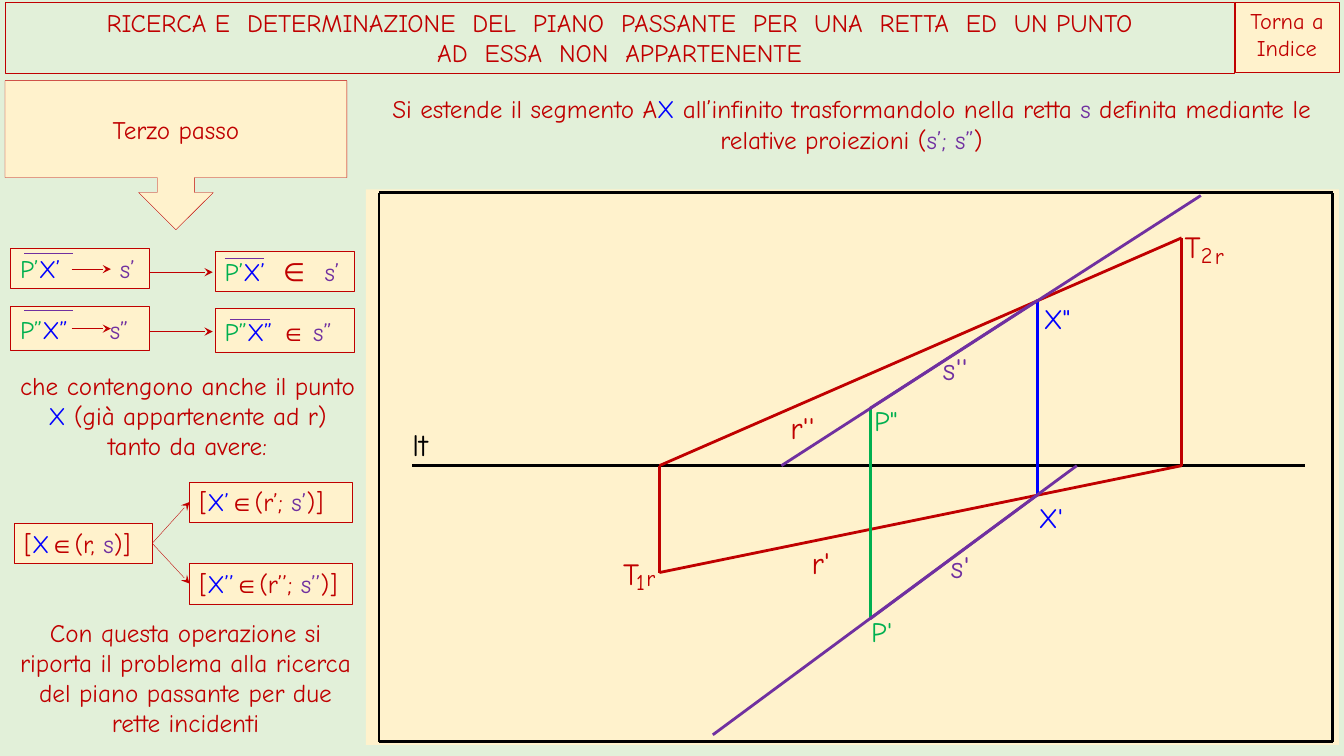
from itertools import pairwise

from lxml import etree
from pptx import Presentation
from pptx import util as u
from pptx.dml import color
from pptx.enum import shapes, text
from pptx.oxml import ns

COLUMNS, ROWS = 1333, 750
WIDTH, HEIGHT = u.Inches(13.33), u.Inches(7.5)
MINT, CREAM, BLACK = "E2F0D9", "FFF2CC", "000000"
RED, GREEN, BLUE, PURPLE = "C00000", "00B050", "0000FF", "7030A0"
FONT, SYMBOL_FONT = "Comic Neue", "Arial"
CENTER, LEFT = text.PP_ALIGN.CENTER, text.PP_ALIGN.LEFT
TOP, MIDDLE, BOTTOM = text.MSO_ANCHOR.TOP, text.MSO_ANCHOR.MIDDLE, text.MSO_ANCHOR.BOTTOM
RECTANGLE = shapes.MSO_SHAPE.RECTANGLE


def rgb(code):
    """Turn a hex string into a colour."""
    return color.RGBColor.from_string(code)


def across(columns):
    """Convert grid columns to a length."""
    return round(WIDTH * columns / COLUMNS)


def down(rows):
    """Convert grid rows to a length."""
    return round(HEIGHT * rows / ROWS)


def place(left, top, width, height):
    """Convert a grid cell range to a position and a size."""
    return across(left), down(top), across(width), down(height)


def set_tabs(paragraph, stops):
    """Add left tab stops, given in columns, to a paragraph."""
    tab_list = etree.SubElement(paragraph._p.get_or_add_pPr(), ns.qn("a:tabLst"))
    for stop in stops:
        etree.SubElement(tab_list, ns.qn("a:tab"), pos=str(across(stop)), algn="l")


def write(paragraph, runs, size=18, align=CENTER, stops=()):
    """Fill a paragraph with runs of (text, colour, optional font)."""
    if stops:
        set_tabs(paragraph, stops)
    paragraph.alignment = align
    paragraph.font.size = u.Pt(size)
    paragraph.font.name = FONT
    for words, code, *fonts in runs:
        run = paragraph.add_run()
        run.text = words
        run.font.color.rgb = rgb(code)
        if fonts:
            run.font.name = fonts[0]


def add_panel(slide, area, fill=CREAM, outline=RED, kind=RECTANGLE, anchor=TOP):
    """Add a shape with an optional fill and outline."""
    shape = slide.shapes.add_shape(kind, *place(*area))
    shape.shadow.inherit = False
    if fill:
        shape.fill.solid()
        shape.fill.fore_color.rgb = rgb(fill)
    else:
        shape.fill.background()
    if outline:
        shape.line.color.rgb = rgb(outline)
        shape.line.width = u.Pt(0.25)
    else:
        shape.line.fill.background()
    shape.text_frame.word_wrap = True
    shape.text_frame.vertical_anchor = anchor
    return shape


def add_formula(slide, area, runs, anchor=TOP, stops=(), spaced=False):
    """Add a framed box that holds one formula."""
    box = add_panel(slide, area, anchor=anchor)
    paragraph = box.text_frame.paragraphs[0]
    write(paragraph, runs, align=LEFT, stops=stops)
    if spaced:
        paragraph.line_spacing = 1.15
        paragraph.space_after = u.Pt(10)
    return box


def add_label(slide, area, words, code, size):
    """Add a tight label to the drawing."""
    frame = add_panel(slide, area, outline=None).text_frame
    frame.margin_left = frame.margin_right = frame.margin_top = frame.margin_bottom = 0
    frame.word_wrap = False
    write(frame.paragraphs[0], [(words, code)], size, LEFT)


def add_note(slide, area, runs):
    """Add a centred passage of text."""
    frame = slide.shapes.add_textbox(*place(*area)).text_frame
    frame.word_wrap = True
    write(frame.paragraphs[0], runs)


def add_line(slide, start, end, code, width=0, arrow=False):
    """Add a straight line, with an arrowhead at its end if asked."""
    line = slide.shapes.add_connector(
        shapes.MSO_CONNECTOR.STRAIGHT,
        across(start[0]), down(start[1]), across(end[0]), down(end[1]))
    line.line.color.rgb = rgb(code)
    line.line.width = u.Pt(width)
    if arrow:
        etree.SubElement(line.line._get_or_add_ln(), ns.qn("a:tailEnd"), type="stealth")
    etree.SubElement(line._element.spPr, ns.qn("a:effectLst"))
    return line


def add_header(slide):
    """Add the step callout, the title and the index box."""
    callout = add_panel(slide, (5, 80, 339, 148), anchor=MIDDLE,
                        kind=shapes.MSO_SHAPE.DOWN_ARROW_CALLOUT)
    write(callout.text_frame.paragraphs[0], [("Terzo passo", RED)])
    title = add_panel(slide, (5, 2, 1219, 71), fill=None).text_frame
    write(title.paragraphs[0], [(
        "RICERCA E  DETERMINAZIONE  DEL  PIANO  PASSANTE  PER  UNA  RETTA  ED  UN PUNTO", RED)])
    write(title.add_paragraph(), [("AD  ESSA  NON  APPARTENENTE", RED)])
    index = add_panel(slide, (1225, 2, 103, 70))
    write(index.text_frame.paragraphs[0], [("Torna a Indice", RED)], 16)


def add_drawing(slide):
    """Add the projections of the lines r and s."""
    add_panel(slide, (363, 188, 965, 551), outline=None)
    for area, words, code, size in [
        ((409, 422, 32, 51), "lt", BLACK, 22),
        ((864, 610, 25, 34), "P'", GREEN, 20),
        ((867, 400, 26, 34), 'P"', GREEN, 20),
        ((1035, 299, 32, 34), 'X"', BLUE, 20),
        ((1030, 497, 31, 34), "X'", BLUE, 20),
        ((1175, 226, 21, 37), "T", RED, 22),
        ((1191, 239, 14, 27), "2", RED, 16),
        ((1205, 240, 11, 27), "r", RED, 16),
        ((618, 550, 21, 37), "T", RED, 22),
        ((631, 564, 10, 27), "1", RED, 16),
        ((641, 560, 11, 27), "r", RED, 16),
        ((805, 539, 27, 37), "r'", RED, 22),
        ((784, 406, 39, 37), "r''", RED, 22),
        ((935, 347, 39, 37), "s''", PURPLE, 22),
        ((943, 543, 27, 37), "s'", PURPLE, 22),
    ]:
        add_label(slide, area, words, code, size)
    x_first, x_second = (1029, 491), (1029, 298)
    p_first, p_second = (863, 614), (863, 405)
    trace_first, trace_second = (654, 568), (1172, 236)
    foot_first, foot_second = (654, 462), (1172, 462)
    corners = [(376, 736), (1322, 736), (1322, 191), (376, 191), (376, 736)]
    for points, code in [
        (corners, BLACK),
        ([(409, 462), (1294, 462)], BLACK),
        ([foot_first, trace_first, foot_second, trace_second, foot_first], RED),
        ([p_second, p_first], GREEN),
        ([x_second, x_first], BLUE),
        ([x_second, p_second], PURPLE),
        ([x_first, p_first], PURPLE),
        ([(1191, 194), (775, 462)], PURPLE),
        ([(1068, 462), (707, 729)], PURPLE),
    ]:
        for start, end in pairwise(points):
            add_line(slide, start, end, code)


def add_segments(slide):
    """Add the boxes that turn each segment into a line."""
    for y in (329, 270):
        add_line(slide, (148, y), (211, y), RED, 0.25, arrow=True)
    for area, mark, middle, stops, spaced in [
        ((213, 306, 138, 43), "”", [("X” ", BLUE), ("∈ ", RED, SYMBOL_FONT)], (), True),
        ((10, 304, 138, 43), "”", [("X”\t", BLUE)], (89,), True),
        ((10, 246, 138, 40), "’", [("X’\t", BLUE)], (99,), False),
        ((213, 249, 138, 40), "’", [("X’\t", BLUE), ("∈\t", RED)], (58, 99), False),
    ]:
        runs = [("P" + mark, GREEN), *middle, ("s" + mark, PURPLE)]
        add_formula(slide, area, runs, BOTTOM, stops, spaced)
    for y in (326, 267):
        add_line(slide, (71, y), (110, y), RED, 0.25, arrow=True)
    for left, right, y in [(228, 268, 317), (24, 72, 308), (24, 72, 251), (223, 262, 256)]:
        add_line(slide, (left, y), (right, y), PURPLE, 0.5)


def add_membership(slide):
    """Add the branching formulas for the point X."""
    boxes = [
        add_formula(slide, area, [("[", RED), (point, BLUE), ("∈", RED, SYMBOL_FONT),
                                  (r_line, RED), (s_line, PURPLE), (")]", RED)])
        for area, point, r_line, s_line in [
            ((14, 519, 137, 40), "X", "(r, ", "s"),
            ((188, 478, 161, 40), "X’", "(r’; ", "s’"),
            ((188, 559, 161, 40), "X’’", "(r’’; ", "s’’"),
        ]
    ]
    for branch, y in zip(boxes[1:], (498, 579)):
        arrow = add_line(slide, (151, 539), (188, y), RED, 0.25, arrow=True)
        arrow.begin_connect(boxes[0], 3)
        arrow.end_connect(branch, 1)


def main():
    """Build the slide and save it."""
    presentation = Presentation()
    presentation.slide_width, presentation.slide_height = WIDTH, HEIGHT
    slide = presentation.slides.add_slide(presentation.slide_layouts[6])
    slide.background.fill.solid()
    slide.background.fill.fore_color.rgb = rgb(MINT)
    add_header(slide)
    add_drawing(slide)
    add_note(slide, (364, 88, 961, 71), [
        ("Si estende il segmento A", RED), ("X ", BLUE),
        ("all’infinito trasformandolo nella retta ", RED), ("s", PURPLE),
        (" definita mediante le relative proiezioni (", RED), ("s’; s”", PURPLE), (")", RED)])
    add_segments(slide)
    add_note(slide, (9, 362, 354, 101), [
        ("che contengono anche il punto ", RED), ("X ", BLUE),
        ("(già appartenente ad r) tanto da avere:", RED)])
    add_membership(slide)
    add_note(slide, (4, 607, 360, 131), [(
        "Con questa operazione si riporta il problema alla ricerca "
        "del piano passante per due rette incidenti", RED)])
    presentation.save("out.pptx")


if __name__ == "__main__":
    main()
